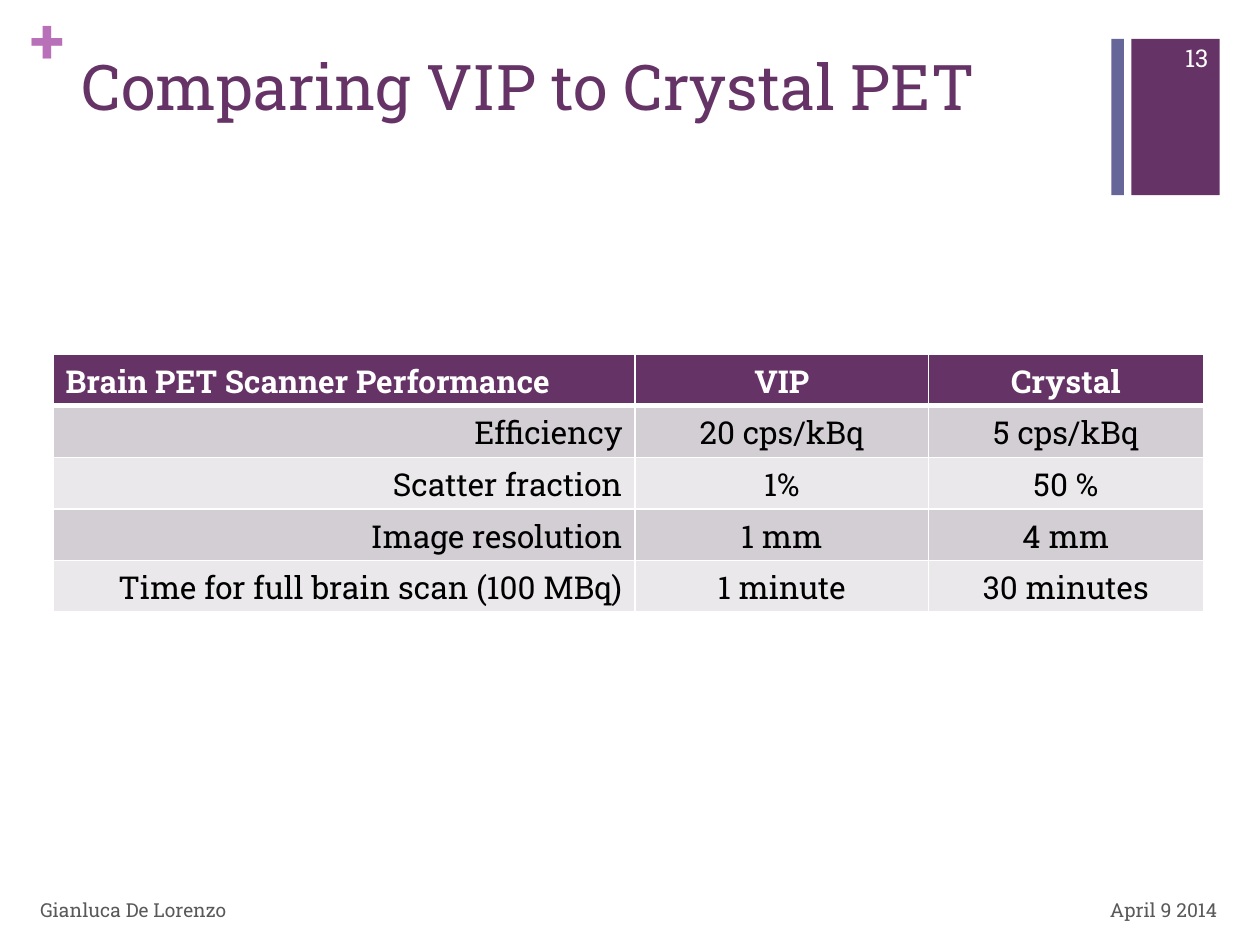
from pptx import Presentation
from pptx.dml.color import RGBColor
from pptx.enum.shapes import MSO_SHAPE
from pptx.enum.text import MSO_ANCHOR, PP_ALIGN
from pptx.oxml import parse_xml
from pptx.oxml.ns import nsdecls
from pptx.util import Inches, Pt

FONT = "Roboto Slab"
PLUM, BLUE, PINK = "663366", "666699", "B870B8"
WHITE, BLACK, GREY = "FFFFFF", "000000", "595959"
BANDS = ["D3CED3", "EAE8EA"]
LEFT, MID, RIGHT = PP_ALIGN.LEFT, PP_ALIGN.CENTER, PP_ALIGN.RIGHT

WIDTHS = [4.62, 2.33, 2.18]
ROWS = [
    ["Brain PET Scanner Performance", "VIP", "Crystal"],
    ["Efficiency", "20 cps/kBq", "5 cps/kBq"],
    ["Scatter fraction", "1%", "50 %"],
    ["Image resolution", "1 mm", "4 mm"],
    ["Time for full brain scan (100 MBq)", "1 minute", "30 minutes"],
]


def color(code):
    return RGBColor.from_string(code)


def write(frame, text, size, code, align=LEFT, bold=False):
    frame.text = text
    para = frame.paragraphs[0]
    para.alignment = align
    font = para.runs[0].font
    look = {"name": FONT, "size": Pt(size), "bold": bold}
    for key, value in look.items():
        setattr(font, key, value)
    font.color.rgb = color(code)


def label(slide, box, text, size, code, align=LEFT, **extra):
    frame = slide.shapes.add_textbox(*map(Inches, box)).text_frame
    look = {"word_wrap": True, "vertical_anchor": MSO_ANCHOR.MIDDLE, **extra}
    for key, value in look.items():
        setattr(frame, key, value)
    write(frame, text, size, code, align)
    return frame


def block(slide, box, code):
    shape = slide.shapes.add_shape(MSO_SHAPE.RECTANGLE, *map(Inches, box))
    shape.shadow.inherit = False
    shape.fill.solid()
    shape.fill.fore_color.rgb = color(code)
    shape.line.fill.background()


def corner(slide, box):
    # Thin bar, gap, then wide block that holds the page number
    x, y, wide, high = box
    block(slide, (x, y, 0.1, high), BLUE)
    block(slide, (x + 0.16, y, wide - 0.16, high), PLUM)
    label(slide, (x + 0.26, y - 0.05, 0.61, 0.4), "13", 14, WHITE, RIGHT)


def header(slide, box):
    # Plus sign beside the title
    x, y, wide, high = box
    none = dict.fromkeys(
        ["margin_left", "margin_top", "margin_right", "margin_bottom"], 0)
    frame = label(slide, (x - 0.31, 0, 0.29, 0.61), "+", 36, PINK,
                  **none | {"vertical_anchor": MSO_ANCHOR.TOP,
                            "word_wrap": False})
    frame.paragraphs[0].runs[0].font.bold = True

    # Title
    title = slide.shapes.title
    place = {"left": x, "top": y, "width": wide, "height": high}
    for key, value in place.items():
        setattr(title, key, Inches(value))
    title.text_frame.vertical_anchor = MSO_ANCHOR.TOP
    write(title.text_frame, "Comparing VIP to Crystal PET", 36, PLUM)


def border(cell, head):
    props = cell._tc.get_or_add_tcPr()
    sides = {"lnL": 1, "lnR": 1, "lnT": 1, "lnB": 3 if head else 1}
    for at, (side, size) in enumerate(sides.items()):
        props.insert(at, parse_xml(
            f'<a:{side} {nsdecls("a")} w="{Pt(size)}"><a:solidFill>'
            f'<a:srgbClr val="{WHITE}"/></a:solidFill></a:{side}>'))


def scores(slide, box):
    # Header row, then banded rows
    table = slide.shapes.add_table(
        len(ROWS), len(WIDTHS), *map(Inches, box)).table
    for col, wide in zip(table.columns, WIDTHS):
        col.width = Inches(wide)
    for r, row in enumerate(ROWS):
        head = r == 0
        for c, text in enumerate(row):
            cell = table.cell(r, c)
            cell.fill.solid()
            cell.fill.fore_color.rgb = color(
                PLUM if head else BANDS[(r - 1) % 2])
            cell.vertical_anchor = MSO_ANCHOR.TOP if head else MSO_ANCHOR.MIDDLE
            align = MID if c else LEFT if head else RIGHT
            write(cell.text_frame, text, 18, WHITE if head else BLACK,
                  align, head)
            border(cell, head)


def footer(slide, box):
    # Author at left, date at right
    x, y, wide, high = box
    label(slide, (x, y, 6.7, high), "Gianluca De Lorenzo", 11, GREY)
    label(slide, (x + wide - 2.33, y, 2.33, high), "April 9 2014", 11, GREY,
          RIGHT)


def main():
    deck = Presentation()
    deck.slide_width, deck.slide_height = Inches(10), Inches(7.5)
    slide = deck.slides.add_slide(deck.slide_layouts[5])
    corner(slide, (8.82, 0.31, 0.86, 1.24))
    header(slide, (0.55, 0.33, 8.26, 1.22))
    scores(slide, (0.42, 2.81, 9.13, 2.05))
    footer(slide, (0.22, 7.02, 9.54, 0.4))
    deck.save("out.pptx")


if __name__ == "__main__":
    main()
